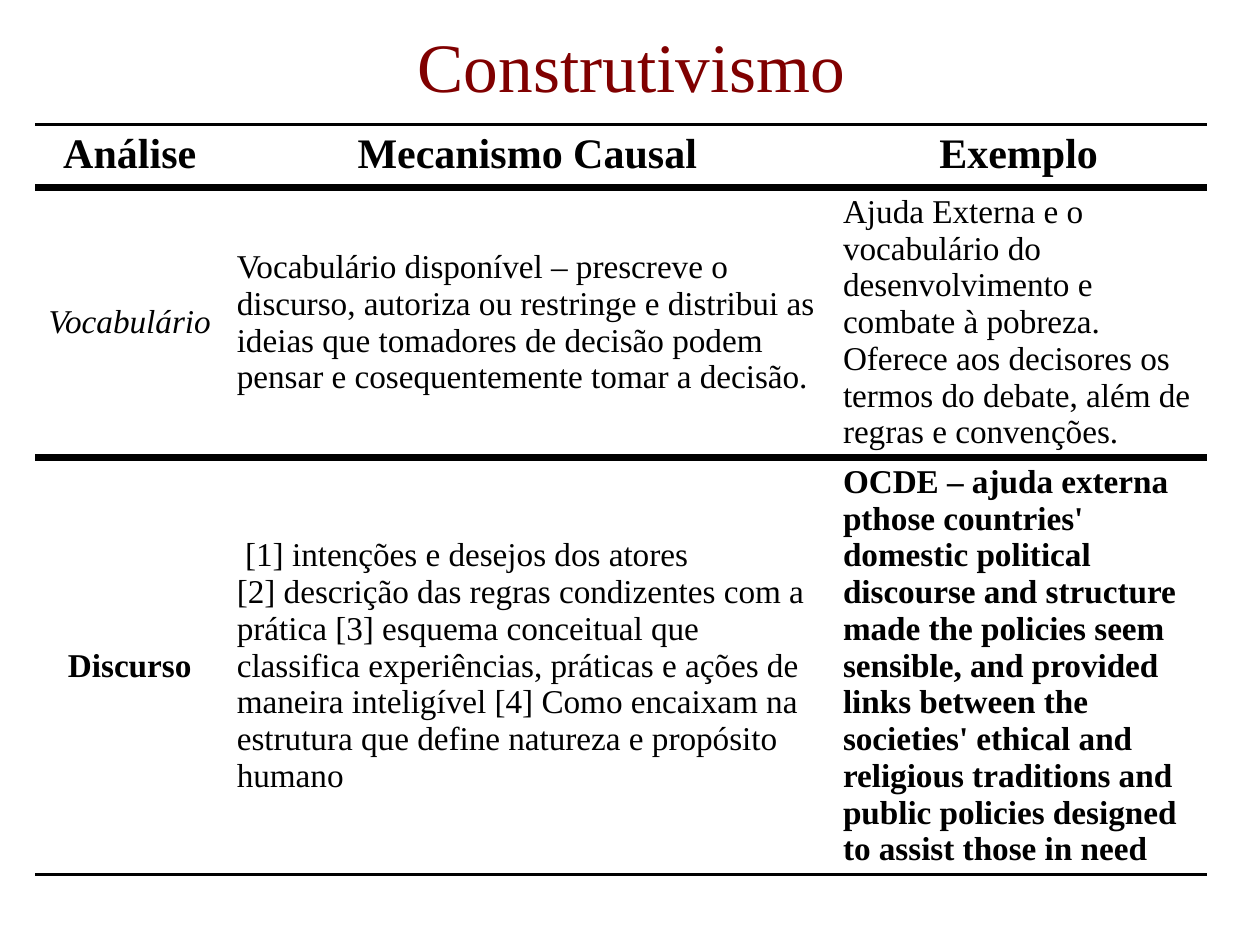
"""Builds the slide that compares constructivist analyses."""
from lxml import etree
from pptx import Presentation
from pptx.dml.color import RGBColor
from pptx.enum.text import MSO_ANCHOR, PP_ALIGN
from pptx.oxml.ns import qn
from pptx.util import Cm, Pt

CENTER, LEFT = PP_ALIGN.CENTER, PP_ALIGN.LEFT
TOP, MIDDLE = MSO_ANCHOR.TOP, MSO_ANCHOR.MIDDLE
TITLE_ONLY = 5
FONT = "Times New Roman"
BLACK, WHITE, MAROON = "000000", "FFFFFF", "800000"
HEADER_SIZE, BODY_SIZE, BODY_SPACING = 24, 19, Pt(21)
COLUMN_WIDTHS = [3.81, 12.22, 7.59]
ROW_HEIGHTS = [1.27, 5.44, 8.4]
RULE_WIDTHS = [2, 4.5, 4.5, 2]

HEADINGS = ["Análise", "Mecanismo Causal", "Exemplo"]
VOCABULARY = [
    "Vocabulário",
    "Vocabulário disponível – prescreve o discurso, autoriza ou restringe e "
    "distribui as ideias que tomadores de decisão podem pensar e "
    "cosequentemente tomar a decisão.",
    "Ajuda Externa e o vocabulário do desenvolvimento e combate à pobreza. "
    "Oferece aos decisores os termos do debate, além de regras e convenções.",
]
DISCOURSE = [
    "Discurso",
    " [1] intenções e desejos dos atores\n"
    "[2] descrição das regras condizentes com a prática [3] esquema conceitual "
    "que classifica experiências, práticas e ações de maneira inteligível "
    "[4] Como encaixam na estrutura que define natureza e propósito humano",
    "OCDE – ajuda externa pthose countries' domestic political discourse and "
    "structure made the policies seem sensible, and provided links between the "
    "societies' ethical and religious traditions and public policies designed "
    "to assist those in need",
]


def rgb(color):
    """Return the colour for a hex string."""
    return RGBColor.from_string(color)


def format_text(frame, size, color, align, bold=False, italic=False, spacing=None):
    """Format every paragraph of a text frame."""
    for paragraph in frame.paragraphs:
        paragraph.alignment = align
        paragraph.line_spacing = spacing
        font = paragraph.font
        font.name, font.size = FONT, Pt(size)
        font.bold, font.italic = bold, italic
        font.color.rgb = rgb(color)


def add_border(cell, side, width=None):
    """Give one side of a cell a black rule, or none without a width."""
    border = etree.SubElement(cell._tc.get_or_add_tcPr(), qn(f"a:ln{side}"))
    if width is None:
        etree.SubElement(border, qn("a:noFill"))
        return
    border.set("w", str(Pt(width)))
    fill = etree.SubElement(border, qn("a:solidFill"))
    etree.SubElement(fill, qn("a:srgbClr"), val=BLACK)


def fill_cell(cell, text, row, anchor, size, align, **style):
    """Write a cell with its rules, background and text format."""
    cell.text = text
    cell.vertical_anchor = anchor
    for side in "LR":
        add_border(cell, side)
    add_border(cell, "T", RULE_WIDTHS[row])
    add_border(cell, "B", RULE_WIDTHS[row + 1])
    cell.fill.solid()
    cell.fill.fore_color.rgb = rgb(WHITE)
    format_text(cell.text_frame, size, BLACK, align, **style)


def add_title(slide, text):
    """Place and format the slide title."""
    title = slide.shapes.title
    title.left, title.top = Cm(1.3), Cm(0.33)
    title.width, title.height = Cm(22.86), Cm(1.96)
    title.text_frame.text = text
    title.text_frame.vertical_anchor = MIDDLE
    format_text(title.text_frame, 39.6, MAROON, CENTER)


def add_analysis_table(slide):
    """Add the table of analyses, mechanisms and examples."""
    table = slide.shapes.add_table(
        len(ROW_HEIGHTS), len(COLUMN_WIDTHS), Cm(0.71), Cm(2.51),
        Cm(sum(COLUMN_WIDTHS)), Cm(sum(ROW_HEIGHTS))).table
    table.first_row = table.horz_banding = False
    for column, width in zip(table.columns, COLUMN_WIDTHS):
        column.width = Cm(width)
    for row, height in zip(table.rows, ROW_HEIGHTS):
        row.height = Cm(height)

    for col, heading in enumerate(HEADINGS):
        fill_cell(table.cell(0, col), heading, 0, TOP, HEADER_SIZE, CENTER, bold=True)
    for row, texts in enumerate([VOCABULARY, DISCOURSE], start=1):
        for col, text in enumerate(texts):
            fill_cell(table.cell(row, col), text, row,
                      TOP if col == 2 else MIDDLE, BODY_SIZE,
                      CENTER if col == 0 else LEFT,
                      bold=row == 2 and col != 1,
                      italic=row == 1 and col == 0,
                      spacing=BODY_SPACING)


def main():
    """Build and save the presentation."""
    presentation = Presentation()
    presentation.slide_width, presentation.slide_height = Cm(25.4), Cm(19.05)
    slide = presentation.slides.add_slide(presentation.slide_layouts[TITLE_ONLY])
    add_title(slide, "Construtivismo")
    add_analysis_table(slide)
    presentation.save("out.pptx")


if __name__ == "__main__":
    main()
